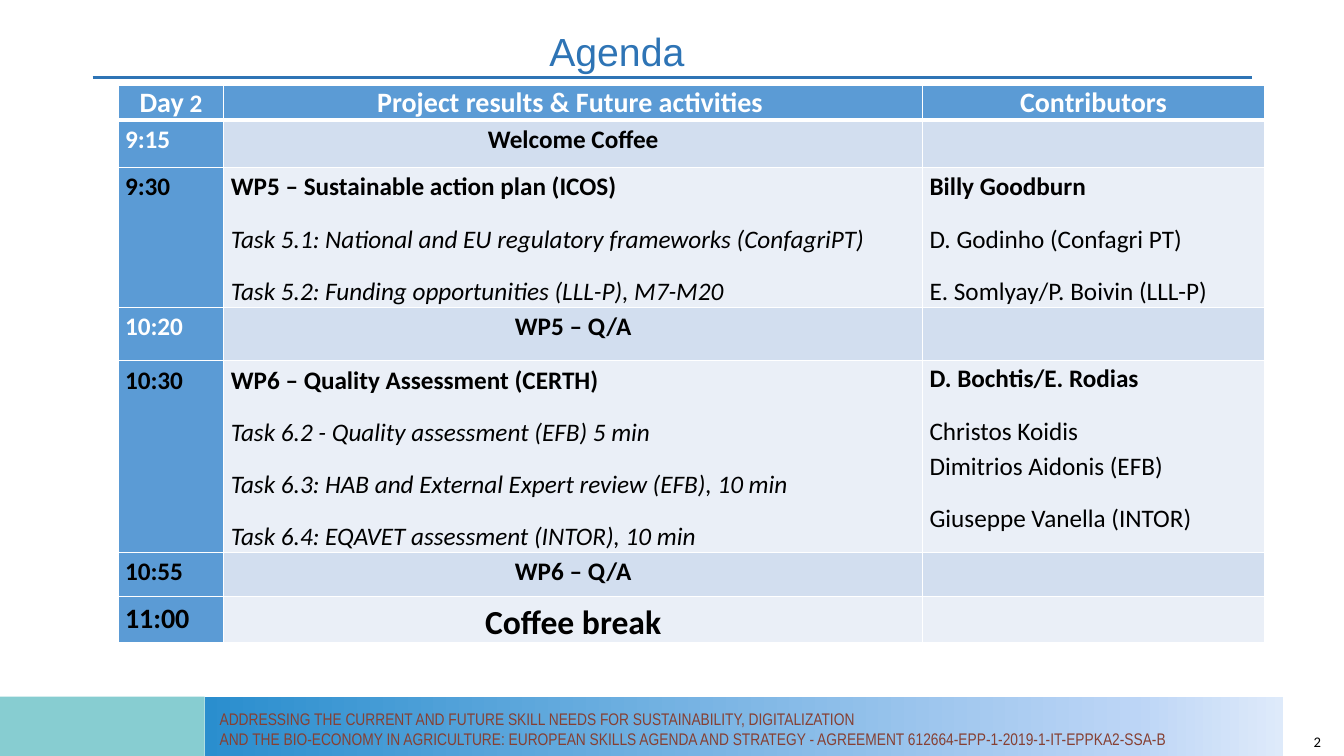
from copy import deepcopy
from lxml import etree
from pptx import Presentation
from pptx.dml.color import RGBColor
from pptx.enum.shapes import MSO_CONNECTOR as Connector, MSO_SHAPE as Shape
from pptx.enum.text import MSO_ANCHOR as Anchor, PP_ALIGN as Align
from pptx.oxml.ns import qn
from pptx.util import Inches, Pt

COLORS = {
    "title": "2E74B5", "teal": "87CDD1", "footer": "864033",
    "bar_start": "2A8ECE", "bar_middle": "BCD5F6", "bar_end": "DEEAFA",
    "header": "5B9BD5", "band_dark": "D2DEEF", "band_light": "EAEFF7",
    "white": "FFFFFF", "black": "000000",
}
COLUMNS = (1.05, 6.93, 3.39)
HEADINGS = ("Day 2", "Project results & Future activities ", "Contributors")
FOOTER = ("ADDRESSING THE CURRENT AND FUTURE SKILL NEEDS FOR SUSTAINABILITY, DIGITALIZATION \v"
          "AND THE BIO-ECONOMY IN AGRICULTURE: EUROPEAN SKILLS AGENDA AND STRATEGY - "
          "AGREEMENT 612664-EPP-1-2019-1-IT-EPPKA2-SSA-B")
HEADER_HEIGHT = 0.34
SESSIONS = [
    (0.47, "9:15", "white", 18, ["Welcome Coffee"], []),
    (1.39, "9:30", "black", 18,
     ["WP5 – Sustainable action plan (ICOS)",
      "Task 5.1: National and EU regulatory frameworks (ConfagriPT)",
      "Task 5.2: Funding opportunities (LLL-P), M7-M20"],
     ["Billy Goodburn", "D. Godinho (Confagri PT)", "E. Somlyay/P. Boivin (LLL-P)"]),
    (0.53, "10:20", "white", 18, ["WP5 – Q/A"], []),
    (1.9, "10:30", "black", 18,
     ["WP6 – Quality Assessment (CERTH)",
      "Task 6.2 - Quality assessment (EFB) 5 min",
      "Task 6.3: HAB and External Expert review (EFB), 10 min",
      "Task 6.4: EQAVET assessment (INTOR), 10 min"],
     ["D. Bochtis/E. Rodias", "Christos Koidis\vDimitrios Aidonis (EFB)",
      "Giuseppe Vanella (INTOR)"]),
    (0.44, "10:55", "black", 18, ["WP6 – Q/A"], []),
    (0.46, "11:00", "black", 20, ["Coffee break"], []),
]


def color(name):
    """Return the named colour."""
    return RGBColor.from_string(COLORS[name])


def style(font, name, size, ink, bold=False, italic=False):
    """Set every property of a font."""
    font.name, font.size, font.bold, font.italic = name, Pt(size), bold, italic
    font.color.rgb = color(ink)


def add_label(page, box, text, name, size, ink, align=Align.LEFT, anchor=Anchor.TOP):
    """Add a wrapped single-paragraph text box and return its paragraph."""
    frame = page.shapes.add_textbox(*map(Inches, box)).text_frame
    frame.word_wrap, frame.vertical_anchor = True, anchor
    para = frame.paragraphs[0]
    para.text, para.alignment = text, align
    style(para.font, name, size, ink)
    return para


def add_block(page, box):
    """Add a plain rectangle without outline or shadow."""
    block = page.shapes.add_shape(Shape.RECTANGLE, *map(Inches, box))
    block.shadow.inherit = False
    block.line.fill.background()
    return block


def add_heading(page, box):
    """Place the slide title above its rule."""
    left, top, width, height = box
    title = add_label(page, (left + 4.43, top, 5.63, height), "Agenda", "Arial", 28, "title")
    title.line_spacing = 0.9
    ends = (left, top + height, left + width, top + height)
    rule = page.shapes.add_connector(Connector.STRAIGHT, *map(Inches, ends))
    rule.line.color.rgb, rule.line.width = color("title"), Pt(2.25)
    etree.SubElement(rule.element.spPr, qn("a:effectLst"))


def add_footer(page, box):
    """Place the two-part footer band, its caption and the page number."""
    left, top, width, height = box
    split = 2.03
    teal = add_block(page, (left, top, split, height))
    teal.fill.solid()
    teal.fill.fore_color.rgb = color("teal")
    bar = add_block(page, (left + split, top, width - split, height))
    bar.fill.gradient()
    bar.fill.gradient_angle = 0
    first = bar.element.xpath(".//a:gsLst/a:gs")[0]
    first.addnext(deepcopy(first))
    stops = zip(bar.fill.gradient_stops, (0, 0.86, 1), ("bar_start", "bar_middle", "bar_end"))
    for stop, position, name in stops:
        stop.position, stop.color.rgb = position, color(name)
    add_label(page, (left + split + 0.05, top + 0.07, width - split - 0.05, 0.5),
              FOOTER, "Arial Narrow", 12, "footer")
    add_label(page, (left + width - 2.53, top + 0.32, 3, 0.25), "2",
              "Calibri", 10.5, "black", Align.RIGHT, Anchor.MIDDLE)


def format_cell(cell, fill, margin, bottom=1):
    """Set the borders, fill and margins of a cell."""
    properties = cell._tc.get_or_add_tcPr()
    for side, points in (("L", 1), ("R", 1), ("T", 1), ("B", bottom)):
        line = etree.SubElement(properties, qn(f"a:ln{side}"), w=str(Pt(points)))
        solid = etree.SubElement(line, qn("a:solidFill"))
        etree.SubElement(solid, qn("a:srgbClr"), val=COLORS["white"])
    cell.fill.solid()
    cell.fill.fore_color.rgb = color(fill)
    cell.margin_left = cell.margin_right = Inches(margin)
    cell.margin_top = cell.margin_bottom = 0


def write_cell(cell, lines, size, ink, align=Align.LEFT, spacing=1.15, italic=False):
    """Write a bold first line and regular lines below it."""
    for index, line in enumerate(lines):
        frame = cell.text_frame
        para = frame.add_paragraph() if index else frame.paragraphs[0]
        para.text, para.alignment, para.line_spacing = line, align, spacing
        para.space_before = para.space_after = Pt(6)
        style(para.font, "Calibri", size, ink, index == 0, italic and index > 0)


def add_agenda(page, box):
    """Place the agenda table with one row per session."""
    frame = page.shapes.add_table(len(SESSIONS) + 1, len(COLUMNS), *map(Inches, box))
    table = frame.table
    for column, width in zip(table.columns, COLUMNS):
        column.width = Inches(width)
    table.rows[0].height = Inches(HEADER_HEIGHT)
    for cell, heading in zip(table.rows[0].cells, HEADINGS):
        format_cell(cell, "header", 0.03, 3)
        cell.vertical_anchor = Anchor.MIDDLE
        write_cell(cell, [heading], 20, "white", Align.CENTER, 1)
    day = table.cell(0, 0).text_frame.paragraphs[0]
    day.runs[0].text = "Day"
    number = day.add_run()
    number.text, number.font.size = " 2", Pt(18)
    for index, (height, time, ink, size, topics, people) in enumerate(SESSIONS, 1):
        table.rows[index].height = Inches(height)
        band = "band_dark" if index % 2 else "band_light"
        start, topic, person = table.rows[index].cells
        for cell, fill in ((start, "header"), (topic, band), (person, band)):
            format_cell(cell, fill, 0.07)
        write_cell(start, [time], size, ink)
        align = Align.LEFT if people else Align.CENTER
        topic_size = 24 if size == 20 else 18
        write_cell(topic, topics, topic_size, "black", align, italic=True)
        write_cell(person, people, 18, "black")
    table.cell(4, 2).text_frame.paragraphs[0].line_spacing = 1.1


def main():
    """Build the agenda slide and save the deck."""
    deck = Presentation()
    deck.slide_width, deck.slide_height = Inches(13.33), Inches(7.5)
    page = deck.slides.add_slide(deck.slide_layouts[6])
    add_heading(page, (0.92, 0.27, 11.5, 0.5))
    add_footer(page, (0, 6.91, 12.73, 0.59))
    add_agenda(page, (1.17, 0.85, sum(COLUMNS), 5.53))
    deck.save("out.pptx")


if __name__ == "__main__":
    main()
